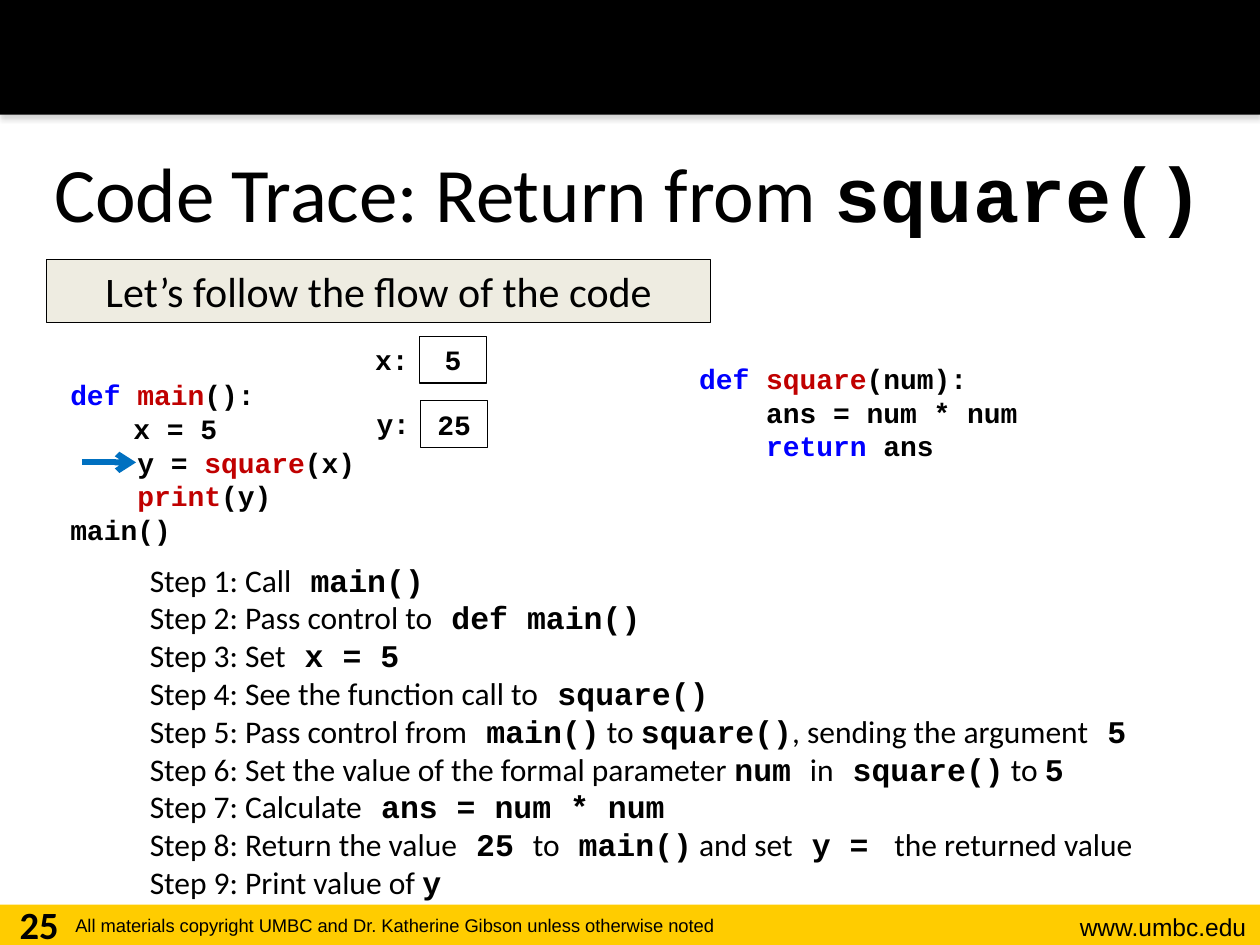
from lxml import etree
from pptx import Presentation
from pptx.dml.color import RGBColor
from pptx.enum.shapes import MSO_CONNECTOR as Connector, MSO_SHAPE as Shape
from pptx.enum.text import MSO_ANCHOR as Anchor, PP_ALIGN as Align
from pptx.oxml import parse_xml
from pptx.oxml.ns import nsdecls, qn
from pptx.util import Inches, Pt

COLORS = {
    "black": "000000",
    "gold": "FFCC00",
    "cream": "EEECE1",
    "keyword": "0000FF",
    "name": "C00000",
    "arrow": "0070C0",
}
BODY, CODE, FOOTER = "Calibri", "Courier New", "Arial"

# Prose and code alternate, parted by a bar
TITLE = "Code Trace: Return from |square()"
STEPS = [
    "Step 1: Call| main()",
    "Step 2: Pass control to| def main()",
    "Step 3: Set| x = 5",
    "Step 4: See the function call to| square()",
    "Step 5: Pass control from| main()| to |square()|, sending the argument| 5",
    "Step 6: Set the value of the formal parameter |num |in| square()| to |5",
    "Step 7: Calculate| ans = num * num",
    "Step 8: Return the value| 25 |to| main()| and set| y = | the returned value",
    "Step 9: Print value of |y",
]

# Each line of code is a list of (text, colour) spans
MAIN_CODE = [
    [("def ", "keyword"), ("main", "name"), ("():", "black")],
    [("\tx = 5", "black")],
    [("    y = ", "black"), ("square", "name"), ("(x)", "black")],
    [("    ", "black"), ("print", "name"), ("(y)", "black")],
    [("main()", "black")],
]
SQUARE_CODE = [
    [("def ", "keyword"), ("square", "name"), ("(num):", "black")],
    [("    ans = num * num", "black")],
    [("    return ", "keyword"), ("ans", "black")],
]


def color(name):
    return RGBColor.from_string(COLORS[name])


def style(para, size, font=None, bold=None, align=None):
    para.alignment = align
    para.font.size = Pt(size)
    para.font.color.rgb = color("black")
    para.font.bold = bold
    if font:
        para.font.name = font


def add_box(page, left, top, width, height, wrap=True, anchor=Anchor.TOP):
    box = page.shapes.add_textbox(
        Inches(left), Inches(top), Inches(width), Inches(height))
    box.text_frame.word_wrap = wrap
    box.text_frame.vertical_anchor = anchor
    return box.text_frame


def add_paras(frame, count):
    return [frame.paragraphs[0]] + [frame.add_paragraph() for _ in range(count - 1)]


def add_label(page, text, place, size, font, bold=False, align=Align.LEFT):
    para = add_box(page, *place).paragraphs[0]
    para.text = text
    style(para, size, font, bold, align)


def add_mixed(frame, lines, size, align=Align.LEFT):
    for para, line in zip(add_paras(frame, len(lines)), lines):
        style(para, size, align=align)
        for index, text in enumerate(line.split("|")):
            span = para.add_run()
            span.text = text
            span.font.name = CODE if index % 2 else BODY
            span.font.bold = bool(index % 2)


def add_code(page, lines, place):
    frame = add_box(page, *place)
    for para, line in zip(add_paras(frame, len(lines)), lines):
        if line[0][0].startswith("\t"):
            tabs = etree.SubElement(para._p.get_or_add_pPr(), qn("a:tabLst"))
            etree.SubElement(tabs, qn("a:tab"), pos=str(Inches(0.5)), algn="l")
        style(para, 16, CODE, True)
        for text, shade in line:
            span = para.add_run()
            span.text = text
            span.font.color.rgb = color(shade)


def add_rect(page, left, top, width, height, fill=None, outlined=False):
    rect = page.shapes.add_shape(
        Shape.RECTANGLE, Inches(left), Inches(top), Inches(width), Inches(height))
    rect.shadow.inherit = False
    if fill:
        rect.fill.solid()
        rect.fill.fore_color.rgb = color(fill)
    else:
        rect.fill.background()
    if outlined:
        rect.line.color.rgb = color("black")
        rect.line.width = Pt(0.75)
    else:
        rect.line.fill.background()
    return rect


def fill_rect(rect, text, size, font, bold=False):
    rect.text_frame.vertical_anchor = Anchor.MIDDLE
    para = rect.text_frame.paragraphs[0]
    para.text = text
    style(para, size, font, bold, Align.CENTER)


def add_band_shadow(rect):
    effects = rect._element.spPr.find(qn("a:effectLst"))
    effects.append(parse_xml(
        f'<a:outerShdw {nsdecls("a")} blurRad="{Pt(3.1)}" dist="{Pt(1.8)}" '
        'dir="5400000" rotWithShape="0"><a:srgbClr val="808080">'
        '<a:alpha val="35000"/></a:srgbClr></a:outerShdw>'))


def add_arrow(page, left, right, y):
    arrow = page.shapes.add_connector(
        Connector.STRAIGHT, Inches(left), Inches(y), Inches(right), Inches(y))
    arrow.line.color.rgb = color("arrow")
    arrow.line.width = Pt(3.5)
    etree.SubElement(arrow.line._get_or_add_ln(), qn("a:tailEnd"), type="arrow")
    etree.SubElement(arrow._element.spPr, qn("a:effectLst"))


def add_variable(page, name, value, left, top):
    add_label(page, f"{name}:", (left, top, 2.24, 0.37), 16, CODE, True)
    rect = add_rect(page, left + 0.45, top, 0.53, 0.37, outlined=True)
    fill_rect(rect, value, 16, CODE, True)


def main():
    deck = Presentation()
    deck.slide_width, deck.slide_height = Inches(10), Inches(7.5)
    page = deck.slides.add_slide(deck.slide_layouts[6])

    # Bands and footer
    add_rect(page, 0, 7.18, 10, 0.32, "gold")
    add_band_shadow(add_rect(page, 0, 0, 10, 0.91, "black"))
    add_label(page, "www.umbc.edu", (8, 7.19, 1.99, 0.34), 14, FOOTER,
              align=Align.RIGHT)
    add_label(page, "All materials copyright UMBC and Dr. Katherine Gibson "
              "unless otherwise noted", (0.5, 7.21, 6.56, 0.29), 10.5, FOOTER)
    add_label(page, "25", (0, 7.1, 0.62, 0.4), 22, BODY, True, Align.CENTER)

    # Title and lead
    title = add_box(page, 0.3, 0.9, 9.39, 1.25, anchor=Anchor.MIDDLE)
    add_mixed(title, [TITLE], 44, Align.CENTER)
    lead = add_rect(page, 0.37, 2.06, 5.27, 0.5, "cream", outlined=True)
    fill_rect(lead, "Let’s follow the flow of the code", 24, BODY)

    # Code, current line and variables
    add_code(page, MAIN_CODE, (0.46, 2.95, 2.8, 1.45))
    add_code(page, SQUARE_CODE, (5.45, 2.82, 4.44, 0.91))
    add_arrow(page, 0.65, 1.08, 3.67)
    add_variable(page, "x", "5", 2.88, 2.67)
    add_variable(page, "y", "25", 2.89, 3.18)

    # Steps of the trace
    add_mixed(add_box(page, 1.09, 4.4, 8.08, 2.83, wrap=False), STEPS, 18)

    deck.save("out.pptx")


if __name__ == "__main__":
    main()
